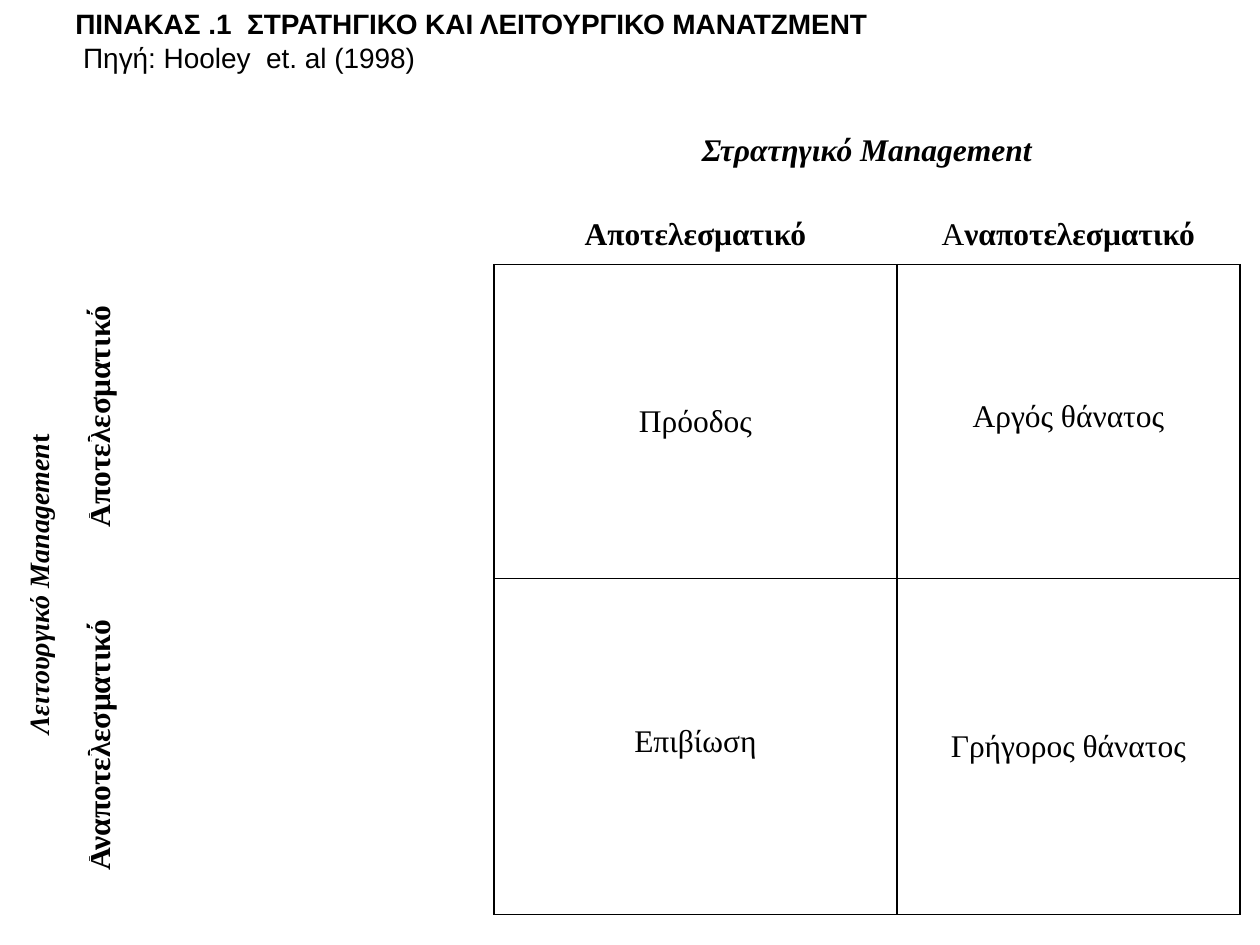
from dataclasses import dataclass

from lxml import etree
from pptx import Presentation
from pptx import util as u
from pptx.dml.color import RGBColor
from pptx.enum import text as t
from pptx.oxml import ns

BLACK = RGBColor(0, 0, 0)
SERIF = "Times New Roman"
SANS = "Arial"
COLS = (0.49, 3.2, 3.2, 2.72)
ROWS = (0.91, 0.41, 2.49, 2.67)
EDGES = ("L", "R", "T", "B")


@dataclass(frozen=True)
class Word:
    text: str
    bold: bool = False
    slant: bool = False


@dataclass(frozen=True)
class Label:
    row: int
    col: int
    words: tuple[Word, ...]
    size: int = 18
    edges: str = ""
    turned: bool = False
    tight: bool = True


LABELS = (
    Label(0, 2, (Word("Στρατηγικό Management", True, True),)),
    Label(1, 2, (Word("Αποτελεσματικό", True),), edges="B"),
    Label(1, 3, (Word("Α"), Word("ναποτελεσματικό", True)), edges="B"),
    Label(2, 0, (Word("Λειτουργικό Managemen", True, True), Word("t", True)),
          size=16, turned=True),
    Label(2, 1, (Word("Αποτελεσματικό", True),), edges="R", turned=True),
    Label(2, 2, (Word("Πρόοδος"),), edges="LRTB", tight=False),
    Label(2, 3, (Word("Αργός θάνατος"),), edges="LRTB"),
    Label(3, 1, (Word("Αναποτελεσματικό ", True),), edges="R", turned=True),
    Label(3, 2, (Word("Επιβίωση"),), edges="LRTB"),
    Label(3, 3, (Word("Γρήγορος θάνατος"),), edges="LRTB", tight=False),
)


def style(run, font: str, size: int, bold: bool, slant: bool = False) -> None:
    run.font.name = font
    run.font.size = u.Pt(size)
    run.font.bold = bold
    run.font.italic = slant
    run.font.color.rgb = BLACK


def indent(para, left: float, first: float) -> None:
    props = para._p.get_or_add_pPr()
    props.set("marL", str(u.Inches(left)))
    props.set("indent", str(u.Inches(first)))


def border(cell, edges: str) -> None:
    props = cell._tc.get_or_add_tcPr()
    for spot, edge in enumerate(e for e in EDGES if e in edges):
        line = etree.Element(ns.qn(f"a:ln{edge}"), w=str(u.Pt(1)))
        fill = etree.SubElement(line, ns.qn("a:solidFill"))
        etree.SubElement(fill, ns.qn("a:srgbClr"), val=str(BLACK))
        props.insert(spot, line)


def write(cell, label: Label) -> None:
    para = cell.text_frame.paragraphs[0]
    para.text = label.words[0].text
    for word in label.words[1:]:
        para.add_run().text = word.text
    for run, word in zip(para.runs, label.words):
        style(run, SERIF, label.size, word.bold, word.slant)
    para.alignment = t.PP_ALIGN.CENTER
    if label.tight:
        para.line_spacing = u.Pt(15)
    if label.turned:
        indent(para, 0.08, 0)
        cell._tc.get_or_add_tcPr().set("vert", "vert270")
    border(cell, label.edges)


def matrix(slide) -> None:
    table = slide.shapes.add_table(
        len(ROWS), len(COLS), u.Inches(0.23), u.Inches(0.78),
        u.Inches(sum(COLS)), u.Inches(sum(ROWS))).table
    table.first_row = False
    table.horz_banding = False
    for col, width in zip(table.columns, COLS):
        col.width = u.Inches(width)
    for row, height in zip(table.rows, ROWS):
        row.height = u.Inches(height)
    for cell in table.iter_cells():
        cell.fill.background()
        cell.vertical_anchor = t.MSO_ANCHOR.MIDDLE
        cell.margin_left = cell.margin_right = u.Inches(0.07)
        cell.margin_top = cell.margin_bottom = 0
    table.cell(0, 2).merge(table.cell(0, 3))
    table.cell(2, 0).merge(table.cell(3, 0))
    for label in LABELS:
        write(table.cell(label.row, label.col), label)


def title(slide) -> None:
    box = slide.shapes.add_textbox(0, 0, u.Inches(7.07), u.Inches(0.64))
    frame = box.text_frame
    frame.text = ("ΠΙΝΑΚΑΣ .1  ΣΤΡΑΤΗΓΙΚΟ ΚΑΙ ΛΕΙΤΟΥΡΓΙΚΟ ΜΑΝΑΤΖΜΕΝΤ\n"
                  " Πηγή: Hooley  et. al (1998)")
    frame.word_wrap = False
    frame.auto_size = t.MSO_AUTO_SIZE.SHAPE_TO_FIT_TEXT
    frame.vertical_anchor = t.MSO_ANCHOR.MIDDLE
    for para, bold in zip(frame.paragraphs, (True, False)):
        indent(para, 0, 0.5)
        style(para.runs[0], SANS, 16, bold)


def main() -> None:
    deck = Presentation()
    deck.slide_width = u.Inches(10)
    deck.slide_height = u.Inches(7.5)
    slide = deck.slides.add_slide(deck.slide_layouts[6])
    matrix(slide)
    title(slide)
    deck.save("out.pptx")


if __name__ == "__main__":
    main()
